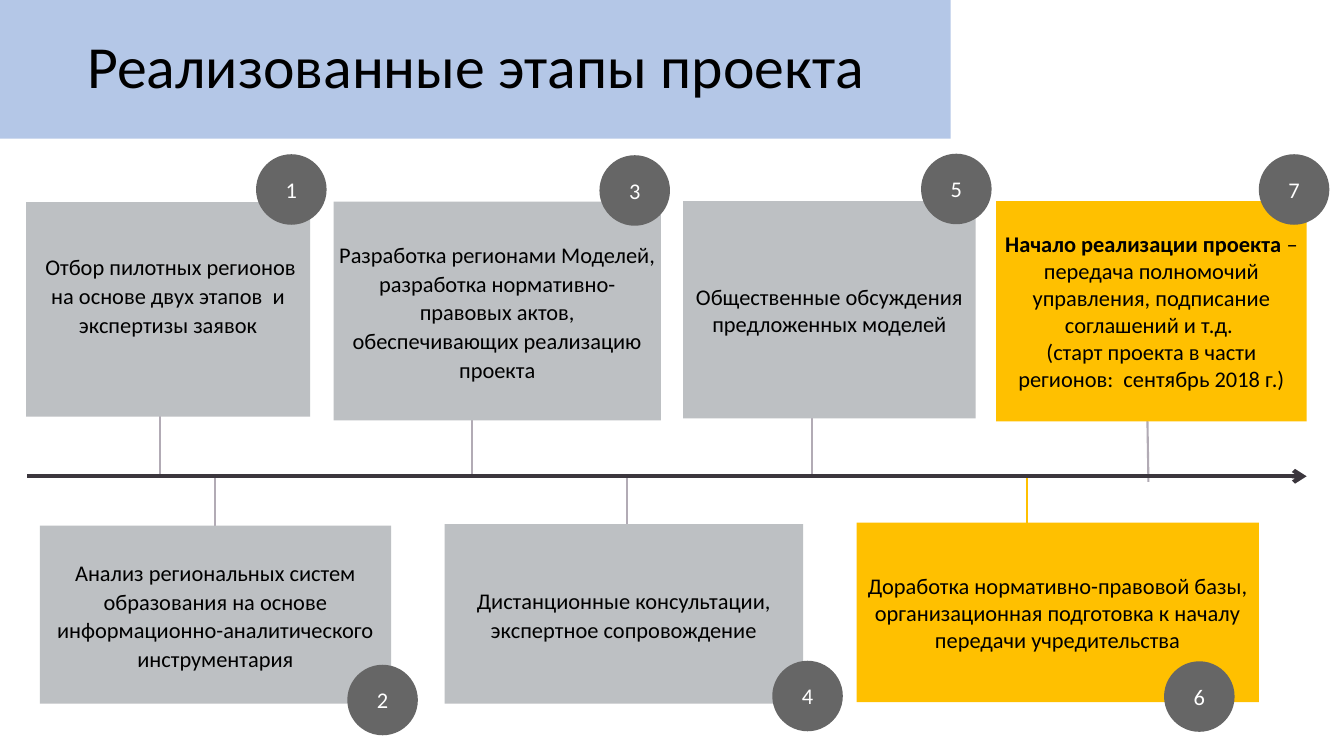
from lxml import etree
from pptx import Presentation
from pptx.dml.color import RGBColor
from pptx.enum.shapes import MSO_CONNECTOR, MSO_SHAPE
from pptx.enum.text import MSO_ANCHOR, PP_ALIGN
from pptx.oxml.ns import qn
from pptx.util import Inches, Pt

RECT, OVAL = MSO_SHAPE.RECTANGLE, MSO_SHAPE.OVAL
STRAIGHT = MSO_CONNECTOR.STRAIGHT
CENTER, LEFT = PP_ALIGN.CENTER, PP_ALIGN.LEFT
MIDDLE = MSO_ANCHOR.MIDDLE

BLACK = RGBColor(0x00, 0x00, 0x00)
WHITE = RGBColor(0xFF, 0xFF, 0xFF)
GREY = RGBColor(0xBD, 0xC0, 0xC3)
DARK_GREY = RGBColor(0x66, 0x66, 0x66)
AMBER = RGBColor(0xFF, 0xC0, 0x00)
STEM = RGBColor(0xB2, 0xAB, 0xB5)
AXIS = RGBColor(0x3B, 0x36, 0x3D)
BLUE = RGBColor(0xB4, 0xC7, 0xE7)

prs = Presentation()
prs.slide_width, prs.slide_height = Inches(26.66), Inches(15)
s = prs.slides.add_slide(prs.slide_layouts[6])

# The slide is a grid of 100 columns by 100 rows.
COL, ROW = prs.slide_width / 100, prs.slide_height / 100
AXIS_ROW = 63
BADGE = 5.25 * COL


def add_block(kind, box, fill, paragraphs, margin, size=32, color=BLACK,
              align=CENTER, spacing=1.0):
    """Add a filled shape; each paragraph is a list of (text, bold) runs."""
    sp = s.shapes.add_shape(kind, *(round(v) for v in box))
    sp.shadow.inherit = False
    sp.fill.solid()
    sp.fill.fore_color.rgb = fill
    sp.line.fill.background()
    tf = sp.text_frame
    frame = {"word_wrap": True, "vertical_anchor": MIDDLE}
    for side in ("left", "right", "top", "bottom"):
        frame[f"margin_{side}"] = Inches(margin)
    for name, value in frame.items():
        setattr(tf, name, value)
    for i, runs in enumerate(paragraphs):
        p = tf.add_paragraph() if i else tf.paragraphs[0]
        p.alignment, p.line_spacing = align, spacing
        for text, bold in runs:
            r = p.add_run()
            r.text = text
            font = {"name": "Calibri", "size": Pt(size), "bold": bold}
            for name, value in font.items():
                setattr(r.font, name, value)
            r.font.color.rgb = color
    return sp


def add_line(x1, y1, x2, y2, color, width):
    ends = (x1 * COL, y1 * ROW, x2 * COL, y2 * ROW)
    line = s.shapes.add_connector(STRAIGHT, *(round(v) for v in ends))
    line.line.color.rgb = color
    line.line.width = Pt(width)
    etree.SubElement(line._element.spPr, qn("a:effectLst"))
    return line


# Box (column, row, columns, rows), badge (column, row), fill, line spacing, text
stages = [
    ((1.95, 26.73, 21.12, 28.4), (19.05, 20.4), GREY, 1.07,
     [[(" Отбор пилотных регионов на основе двух этапов  и экспертизы заявок", False)]]),
    ((2.96, 69.53, 26.14, 23.53), (25.84, 87.93), GREY, 1.07,
     [[("Анализ региональных систем образования на основе "
        "информационно-аналитического инструментария", False)]]),
    ((24.83, 26.67, 24.34, 28.93), (44.6, 20.53), GREY, 1.07,
     [[("Разработка регионами Моделей, разработка нормативно-правовых актов, "
        "обеспечивающих реализацию проекта", False)]]),
    ((33.08, 69.33, 26.67, 23.73), (57.46, 87.4), GREY, 1.07,
     [[("Дистанционные консультации, экспертное сопровождение", False)]]),
    ((50.83, 26.6, 21.76, 28.73), (68.53, 20.33), GREY, 1.0,
     [[("Общественные обсуждения предложенных моделей", False)]]),
    ((63.73, 69.13, 29.93, 23.73), (86.61, 87.47), AMBER, 1.0,
     [[("Доработка нормативно-правовой базы, организационная подготовка "
        "к началу передачи учредительства", False)]]),
    ((74.12, 26.6, 23.11, 29.13), (93.66, 20.4), AMBER, 1.0,
     [[("Начало реализации проекта ", True),
       ("– передача полномочий управления, подписание соглашений и т.д. ", False)],
      [("(старт проекта в части регионов:  сентябрь 2018 г.)", False)]]),
]

# Stems between the boxes and the axis, in stage order
stems = [
    (11.89, 51.2, 11.89, 63.27, STEM),
    (16.02, AXIS_ROW, 16.02, 69.53, STEM),
    (35.11, 50.6, 35.11, 62.67, STEM),
    (46.62, AXIS_ROW, 46.62, 73.2, STEM),
    (60.39, 55.33, 60.39, AXIS_ROW, STEM),
    (76.44, 62.67, 76.44, 73.93, AMBER),
    (85.37, 55.13, 85.45, 63.73, STEM),
]
for *ends, color in stems:
    add_line(*ends, color, 3)

boxes = []
for (x, y, w, h), _, fill, spacing, paragraphs in stages:
    boxes.append(add_block(RECT, (x * COL, y * ROW, w * COL, h * ROW), fill,
                           paragraphs, 0.1, spacing=spacing))
# The first text sits one line above the middle of its box.
boxes[0].text_frame.margin_bottom = Inches(0.68)

axis = add_line(2.03, AXIS_ROW, 97.22, AXIS_ROW, AXIS, 6)
etree.SubElement(axis.line._get_or_add_ln(), qn("a:tailEnd"), type="arrow")

for number, (_, (x, y), *_) in enumerate(stages, 1):
    add_block(OVAL, (x * COL, y * ROW, BADGE, BADGE), DARK_GREY,
              [[(str(number), False)]], 0, color=WHITE)

title = add_block(RECT, (0, 0, 70.74 * COL, 18.33 * ROW), BLUE,
                  [[("Реализованные этапы проекта", False)]], 0.16,
                  size=85.3, align=LEFT, spacing=0.88)
title.text_frame.margin_left = Inches(1.73)

prs.save("out.pptx")
